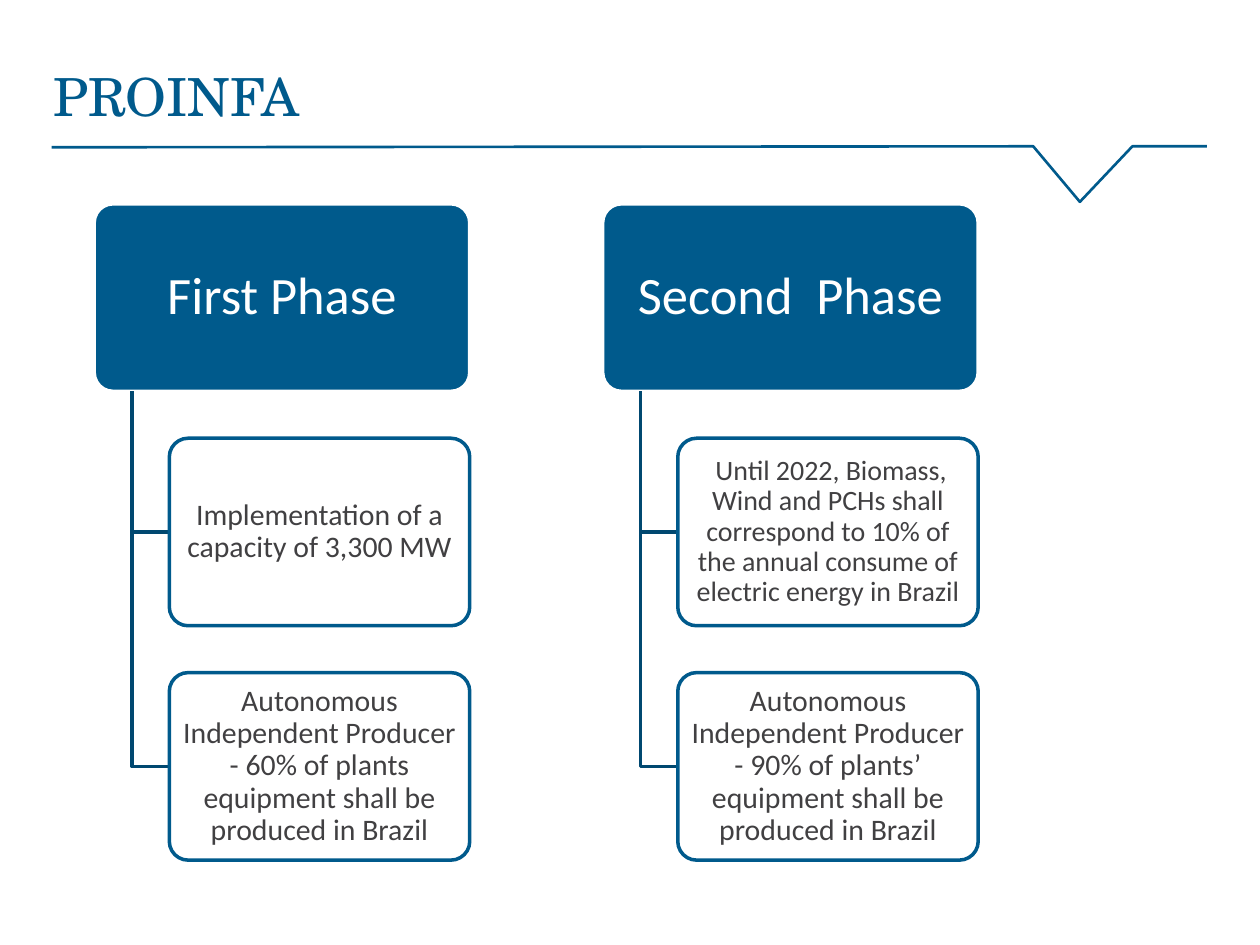
from dataclasses import dataclass

from pptx import Presentation
from pptx.dml.color import RGBColor
from pptx.enum.shapes import MSO_SHAPE
from pptx.enum.text import MSO_ANCHOR, PP_ALIGN
from pptx.slide import Slide
from pptx.text.text import TextFrame
from pptx.util import Cm, Pt

ROUNDED = MSO_SHAPE.ROUNDED_RECTANGLE
TOP, MIDDLE = MSO_ANCHOR.TOP, MSO_ANCHOR.MIDDLE
LEFT, CENTER = PP_ALIGN.LEFT, PP_ALIGN.CENTER

COLORS = {"blue": "005A8C", "branch": "004870", "white": "FFFFFF", "text": "414042"}
BODY_FONT, TITLE_FONT = "Calibri", "TeX Gyre Schola"

CARD_TOP, CARD_W, CARD_H = 4.11, 7.57, 3.78
STEP_Y = CARD_H * 1.25
TRUNK_DX = CARD_W * 0.1
DETAIL_DX, DETAIL_W = CARD_W * 0.2, CARD_W * 0.8
FIRST_LEFT, STEP_X = 1.9, 10.25


@dataclass
class Detail:
    text: str
    size: float = 17
    inset: float = 0.1


@dataclass
class Phase:
    name: str
    details: list[Detail]


PHASES = [
    Phase("First Phase", [
        Detail("Implementation of a capacity of 3,300 MW"),
        Detail("Autonomous Independent Producer - 60% of plants equipment "
               "shall be produced in Brazil"),
    ]),
    Phase("Second  Phase", [
        Detail(" Until 2022, Biomass, Wind and PCHs shall correspond to 10% of the "
               "annual consume of electric energy in Brazil", 16, 0.08),
        Detail("Autonomous Independent Producer - 90% of plants’ equipment "
               "shall be produced in Brazil"),
    ]),
]


def rgb(name: str) -> RGBColor:
    return RGBColor.from_string(COLORS[name])


def write(tf: TextFrame, text: str, size: float, font: str, color: str,
          align: PP_ALIGN, anchor: MSO_ANCHOR, inset_x: float, inset_y: float) -> None:
    tf.word_wrap = True
    tf.vertical_anchor = anchor
    tf.margin_left = tf.margin_right = Cm(inset_x)
    tf.margin_top = tf.margin_bottom = Cm(inset_y)
    p = tf.paragraphs[0]
    p.alignment = align
    p.line_spacing = 0.9 if anchor == MIDDLE else 1.0
    r = p.add_run()
    r.text = text
    r.font.size = Pt(size)
    r.font.name = font
    r.font.color.rgb = rgb(color)


def draw_path(s: Slide, points: list[tuple[float, float]], color: str, width: float) -> None:
    start, *rest = [(Cm(x), Cm(y)) for x, y in points]
    builder = s.shapes.build_freeform(*start)
    builder.add_line_segments(rest, close=False)
    sp = builder.convert_to_shape()
    sp.shadow.inherit = False
    sp.fill.background()
    sp.line.color.rgb = rgb(color)
    sp.line.width = Pt(width)


def draw_card(s: Slide, x: float, y: float, w: float, fill: str, line: str,
              text: str, size: float, color: str, inset_x: float, inset_y: float) -> None:
    sp = s.shapes.add_shape(ROUNDED, Cm(x), Cm(y), Cm(w), Cm(CARD_H))
    sp.adjustments[0] = 0.1
    sp.shadow.inherit = False
    sp.fill.solid()
    sp.fill.fore_color.rgb = rgb(fill)
    sp.line.color.rgb = rgb(line)
    sp.line.width = Pt(2)
    write(sp.text_frame, text, size, BODY_FONT, color, CENTER, MIDDLE, inset_x, inset_y)


def draw_phase(s: Slide, x: float, phase: Phase) -> None:
    draw_card(s, x, CARD_TOP, CARD_W, "blue", "white", phase.name, 30, "white", 0.15, 0.1)
    trunk, detail_x = x + TRUNK_DX, x + DETAIL_DX
    for i, detail in enumerate(phase.details, 1):
        y = CARD_TOP + i * STEP_Y
        mid = y + CARD_H / 2
        draw_path(s, [(trunk, CARD_TOP + CARD_H), (trunk, mid), (detail_x, mid)], "branch", 2)
        draw_card(s, detail_x, y, DETAIL_W, "white", "blue", detail.text,
                  detail.size, "text", detail.inset, 0.05)


def main() -> None:
    prs = Presentation()
    prs.slide_width, prs.slide_height = Cm(25.4), Cm(19.05)
    s = prs.slides.add_slide(prs.slide_layouts[5])

    draw_path(s, [(24.33, 2.95), (22.83, 2.95), (21.77, 4.07), (20.83, 2.95), (1.04, 2.97)],
              "blue", 1.5)

    title = s.shapes.title
    title.left, title.top, title.width, title.height = Cm(1.07), Cm(1.3), Cm(22.2), Cm(2.24)
    write(title.text_frame, "PROINFA", 30, TITLE_FONT, "blue", LEFT, TOP, 0, 0)

    for i, phase in enumerate(PHASES):
        draw_phase(s, FIRST_LEFT + i * STEP_X, phase)

    prs.save("out.pptx")


if __name__ == "__main__":
    main()
